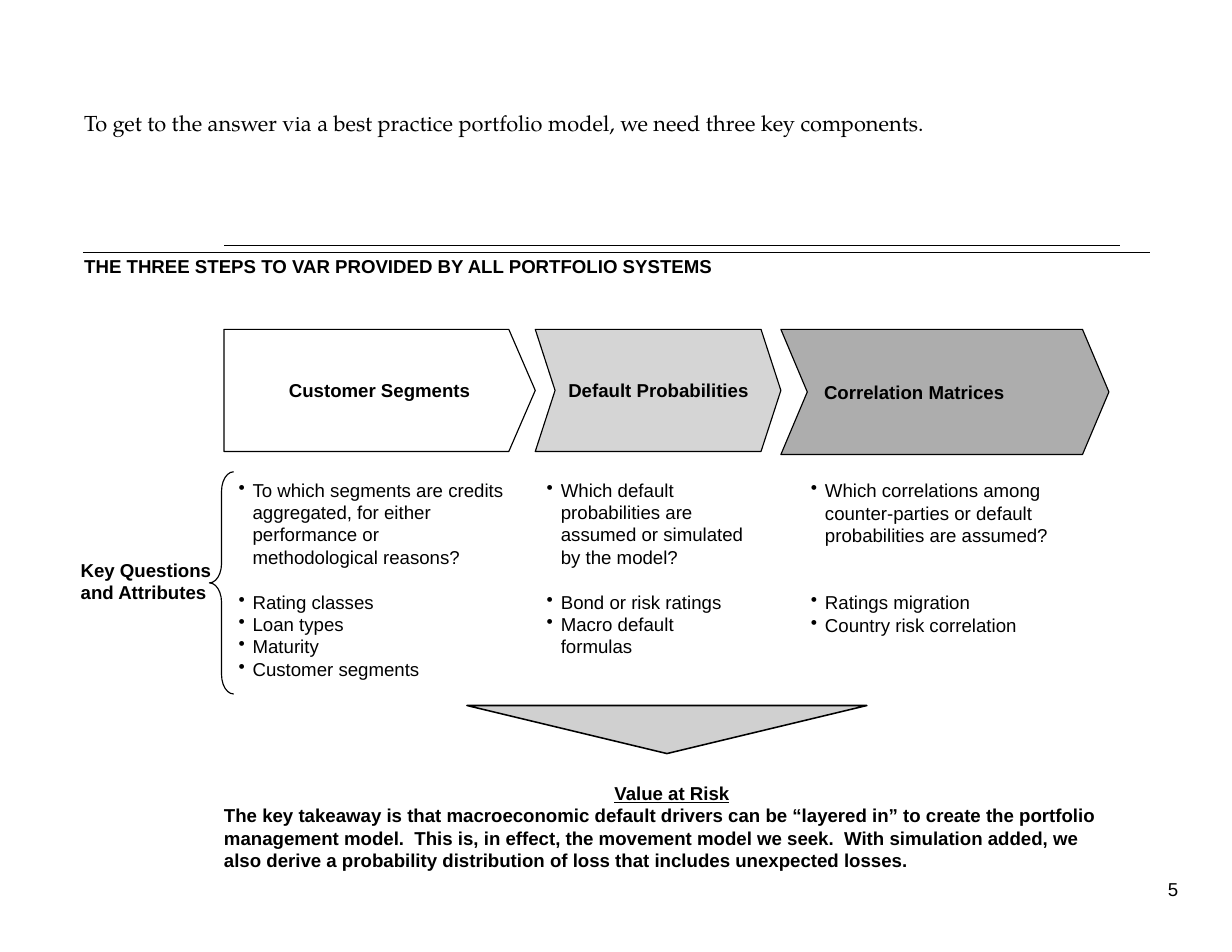
from lxml.etree import SubElement
from pptx import Presentation
from pptx.dml.color import RGBColor
from pptx.enum.shapes import MSO_CONNECTOR, MSO_SHAPE
from pptx.enum.text import MSO_ANCHOR, MSO_AUTO_SIZE, PP_ALIGN
from pptx.oxml.ns import qn
from pptx.util import Cm, Pt

COLORS = {"ink": "000000", "white": "FFFFFF", "light": "D5D5D5",
          "dark": "ADADAD", "arrow": "D0D0D0"}

# Content; lengths in centimetres
TITLE = "THE THREE STEPS TO VAR PROVIDED BY ALL PORTFOLIO SYSTEMS"
LEAD = "To get to the answer via a best practice portfolio model, we need three key components."
ROW_LABEL = "Key Questions and Attributes"
RESULT = "Value at Risk"
TAKEAWAY = ("The key takeaway is that macroeconomic default drivers can be “layered in” to create "
            "the portfolio management model.  This is, in effect, the movement model we seek.  "
            "With simulation added, we also derive a probability distribution of loss that "
            "includes unexpected losses.")
PAGE_NUMBER = "5"

STEPS = [
    {"name": "Customer Segments", "shape": MSO_SHAPE.PENTAGON, "fill": "white",
     "width": 7.06, "height": 2.77, "point": 0.6, "inset": 0.3, "align": PP_ALIGN.CENTER,
     "box": (5.41, 10.85, 6.07, 5.08), "blank_lines": 1,
     "question": "To which segments are credits aggregated, for either performance or "
                 "methodological reasons?",
     "attributes": ["Rating classes", "Loan types", "Maturity", "Customer segments"]},
    {"name": "Default Probabilities", "shape": MSO_SHAPE.CHEVRON, "fill": "light",
     "width": 5.57, "height": 2.77, "point": 0.45, "inset": 0.3, "align": PP_ALIGN.LEFT,
     "box": (12.4, 10.85, 4.47, 4.06), "blank_lines": 1,
     "question": "Which default probabilities are assumed or simulated by the model?",
     "attributes": ["Bond or risk ratings", "Macro default formulas"]},
    {"name": "Correlation Matrices", "shape": MSO_SHAPE.CHEVRON, "fill": "dark",
     "width": 7.44, "height": 2.84, "point": 0.6, "inset": 0.38, "align": PP_ALIGN.LEFT,
     "box": (18.39, 10.87, 6.5, 3.56), "blank_lines": 2,
     "question": "Which correlations among counter-parties or default probabilities are assumed?",
     "attributes": ["Ratings migration", "Country risk correlation"]},
]
STEPS_LEFT, STEPS_TOP = 5.08, 7.47
LINE_HEIGHT = 14.4
RULES = [(5.08, 25.4, 5.56), (1.88, 26.09, 5.72)]


def color(name):
    return RGBColor.from_string(COLORS[name])


def write(frame, text, size=12, font="Arial", bold=False, underline=False,
          align=PP_ALIGN.LEFT, bullet=False, before=0):
    """Fill the first paragraph of the frame, or add another one."""
    paragraph = frame.paragraphs[0]
    if paragraph.runs:
        paragraph = frame.add_paragraph()
    paragraph.alignment = align
    paragraph.space_before = Pt(before)
    run = paragraph.add_run()
    run.text = text
    run.font.size, run.font.name = Pt(size), font
    run.font.bold, run.font.underline = bold, underline
    run.font.color.rgb = color("ink")
    if bullet:
        properties = paragraph._p.get_or_add_pPr()
        properties.set("marL", str(Cm(0.32)))
        properties.set("indent", str(-Cm(0.32)))
        SubElement(properties, qn("a:buChar")).set("char", "•")


def prepare(frame, left=0, right=0, anchor=MSO_ANCHOR.TOP):
    frame.word_wrap = True
    frame.auto_size = MSO_AUTO_SIZE.NONE
    frame.vertical_anchor = anchor
    frame.margin_left, frame.margin_right = Cm(left), Cm(right)
    frame.margin_top = frame.margin_bottom = 0
    return frame


def add_text(slide, box):
    return prepare(slide.shapes.add_textbox(*map(Cm, box)).text_frame)


def add_shape(slide, kind, box, fill=None, adjustment=None, width=0.75):
    shape = slide.shapes.add_shape(kind, *map(Cm, box))
    shape.shadow.inherit = False
    if fill:
        shape.fill.solid()
        shape.fill.fore_color.rgb = color(fill)
    else:
        shape.fill.background()
    shape.line.color.rgb = color("ink")
    shape.line.width = Pt(width)
    if adjustment is not None:
        shape.adjustments[0] = adjustment
    return shape


def main():
    presentation = Presentation()
    presentation.slide_width, presentation.slide_height = Cm(27.94), Cm(21.59)
    slide = presentation.slides.add_slide(presentation.slide_layouts[5])

    # Title and lead sentence
    title = slide.shapes.title
    title.left, title.top, title.width, title.height = map(Cm, (1.91, 5.77, 20.32, 0.51))
    write(prepare(title.text_frame), TITLE, bold=True)
    write(add_text(slide, (1.91, 2.49, 22.99, 0.58)), LEAD, size=14, font="TeX Gyre Pagella")

    # Rules above the title
    for start, end, height in RULES:
        rule = slide.shapes.add_connector(MSO_CONNECTOR.STRAIGHT, Cm(start), Cm(height),
                                          Cm(end), Cm(height))
        rule.line.color.rgb = color("ink")
        rule.line.width = Pt(0.75)
        SubElement(rule._element.spPr, qn("a:effectLst"))

    # Chain of steps, each with its question and attributes below
    left = STEPS_LEFT
    for step in STEPS:
        shape = add_shape(slide, step["shape"], (left, STEPS_TOP, step["width"], step["height"]),
                          step["fill"], step["point"] / step["height"])
        frame = prepare(shape.text_frame, left=step["inset"], anchor=MSO_ANCHOR.MIDDLE)
        write(frame, step["name"], bold=True, align=step["align"])
        left += step["width"]

        frame = add_text(slide, step["box"])
        write(frame, step["question"], bullet=True)
        for index, attribute in enumerate(step["attributes"]):
            gap = 0 if index else step["blank_lines"] * LINE_HEIGHT
            write(frame, attribute, bullet=True, before=gap)

    # Row label and brace
    write(add_text(slide, (1.83, 12.67, 3.07, 1.02)), ROW_LABEL, bold=True)
    add_shape(slide, MSO_SHAPE.LEFT_BRACE, (4.75, 10.7, 0.55, 5.04), adjustment=0.8)

    # Arrow down to the result
    arrow = add_shape(slide, MSO_SHAPE.ISOSCELES_TRIANGLE, (10.59, 16, 9.07, 1.09), "arrow",
                      width=1)
    arrow.rotation = 180
    frame = add_text(slide, (5.08, 17.73, 20.32, 2.03))
    write(frame, RESULT, bold=True, underline=True, align=PP_ALIGN.CENTER)
    write(frame, TAKEAWAY, bold=True)

    # Page number
    write(add_text(slide, (20.9, 19.91, 5.82, 0.51)), PAGE_NUMBER, align=PP_ALIGN.RIGHT)

    presentation.save("out.pptx")


if __name__ == "__main__":
    main()
